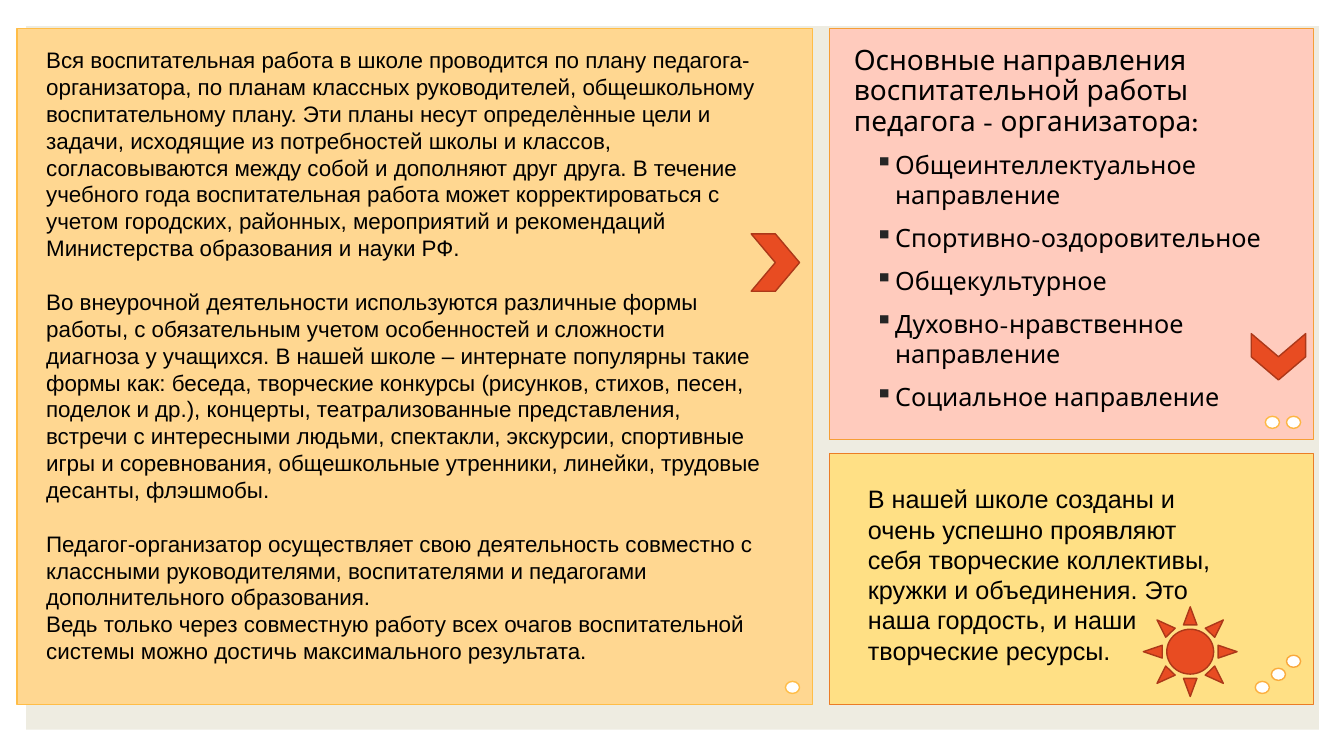
from lxml import etree
from pptx import Presentation
from pptx.dml.color import RGBColor as Rgb
from pptx.enum.shapes import MSO_SHAPE as Shape
from pptx.enum.text import PP_ALIGN as Align
from pptx.oxml.ns import qn
from pptx.util import Inches, Pt

COLORS = {
    "black": "000000", "white": "FFFFFF", "bullet": "262626", "backdrop": "EEECE1",
    "orange": "FFD791", "orange_edge": "FFBD47",
    "pink": "FFCBBD", "pink_edge": "F69E36",
    "yellow": "FFE085", "yellow_edge": "EB7D26",
    "red": "E84C22", "red_edge": "AC3819",
    "dot1": "FEB944", "dot2": "FDB542", "dot3": "FCB040", "dot4": "FAAC3D", "dot5": "F9A83B",
}

deck = Presentation()
deck.slide_width, deck.slide_height = Inches(13.33), Inches(7.5)
page = deck.slides.add_slide(deck.slide_layouts[6])


def add_figure(kind, left, top, width, height, fill, edge=None, rotation=0):
    figure = page.shapes.add_shape(kind, *map(Inches, (left, top, width, height)))
    figure.shadow.inherit = False
    figure.rotation = rotation
    figure.fill.solid()
    figure.fill.fore_color.rgb = Rgb.from_string(COLORS[fill])
    if edge:
        figure.line.color.rgb = Rgb.from_string(COLORS[edge])
        figure.line.width = Pt(1)
    else:
        figure.line.fill.background()


def add_text(texts, left, top, width, height, size, font="Arial", gaps=None,
             spacing=None, bullet=None, inset=0.05):
    """Write one paragraph per text; gaps holds the space before each, in points."""
    box = page.shapes.add_textbox(*map(Inches, (left, top, width, height)))
    frame = box.text_frame
    frame.word_wrap = True
    frame.margin_top = Inches(inset)
    for index, text in enumerate(texts):
        para = frame.add_paragraph() if index else frame.paragraphs[0]
        para.alignment = Align.LEFT
        if bullet:
            props = para._p.get_or_add_pPr()
            props.set("marL", str(Inches(0.2)))
            props.set("indent", str(-Inches(0.2)))
            tint = etree.SubElement(props, qn("a:buClr"))
            etree.SubElement(tint, qn("a:srgbClr"), val=COLORS["bullet"])
            etree.SubElement(props, qn("a:buChar"), char=bullet)
        if spacing:
            para.line_spacing = spacing
        if gaps and gaps[index]:
            para.space_before = Pt(gaps[index])
        span = para.add_run()
        span.text = text
        span.font.name = font
        span.font.size = Pt(size)
        span.font.color.rgb = Rgb.from_string(COLORS["black"])


# Panels
RIGHT, PANEL_TOP, RIGHT_WIDTH = 8.23, 0.28, 4.8
add_figure(Shape.RECTANGLE, 0.26, 0.26, 12.82, 6.98, "backdrop")
add_figure(Shape.RECTANGLE, 0.17, PANEL_TOP, 7.89, 6.71, "orange", "orange_edge")
add_figure(Shape.RECTANGLE, RIGHT, PANEL_TOP, RIGHT_WIDTH, 4.08, "pink", "pink_edge")
add_figure(Shape.RECTANGLE, RIGHT, 4.5, RIGHT_WIDTH, 2.49, "yellow", "yellow_edge")

# Corner dots
for left, top, edge in [
    (7.79, 6.76, "orange_edge"),
    (12.55, 4.13, "dot1"), (12.76, 4.13, "dot2"),
    (12.45, 6.76, "dot3"), (12.61, 6.63, "dot4"), (12.76, 6.5, "dot5"),
]:
    add_figure(Shape.OVAL, left, top, 0.14, 0.12, "white", edge)

# Texts
work_plan = [
    "Вся воспитательная работа в школе проводится по плану педагога-организатора, "
    "по планам классных руководителей, общешкольному воспитательному плану. Эти планы "
    "несут определѐнные цели и задачи, исходящие из потребностей школы и классов, "
    "согласовываются между собой и дополняют друг друга. В течение учебного года "
    "воспитательная работа может корректироваться с учетом городских, районных, "
    "мероприятий и рекомендаций Министерства образования и науки РФ.",
    "Во внеурочной деятельности используются различные формы работы, с обязательным "
    "учетом особенностей и сложности диагноза у учащихся. В нашей школе – интернате "
    "популярны такие формы как: беседа, творческие конкурсы (рисунков, стихов, песен, "
    "поделок и др.), концерты, театрализованные представления, встречи с интересными "
    "людьми, спектакли, экскурсии, спортивные игры и соревнования, общешкольные "
    "утренники, линейки, трудовые десанты, флэшмобы.",
    "Педагог-организатор осуществляет свою деятельность совместно с классными "
    "руководителями, воспитателями и педагогами дополнительного образования.",
    "Ведь только через совместную работу всех очагов воспитательной системы можно "
    "достичь максимального результата.",
]
add_text(work_plan, 0.36, 0.41, 7.3, 6.47, 16, gaps=[0, 19.2, 19.2, 0])

add_text(["Основные направления воспитательной работы педагога - организатора:"],
         8.37, 0.31, 4.55, 1.5, 20, font="League Spartan", spacing=0.9, inset=0.15)

directions = [
    "Общеинтеллектуальное направление",
    "Спортивно-оздоровительное",
    "Общекультурное",
    "Духовно-нравственное направление",
    "Социальное направление",
]
add_text(directions, 8.58, 1.43, 4.26, 4.3, 18, font="League Spartan",
         gaps=[0, 9, 9, 9, 9], bullet="▪")

add_text(["В нашей школе созданы и очень успешно проявляют себя творческие коллективы, "
          "кружки и объединения. Это наша гордость, и наши творческие ресурсы."],
         8.51, 4.75, 3.73, 1.92, 18)

# Red accents
add_figure(Shape.SUN, 11.34, 6.02, 0.93, 0.89, "red", "red_edge")
add_figure(Shape.CHEVRON, 7.45, 2.32, 0.48, 0.57, "red", "red_edge")
add_figure(Shape.CHEVRON, 12.45, 3.27, 0.46, 0.54, "red", "red_edge", rotation=90)

deck.save("out.pptx")
